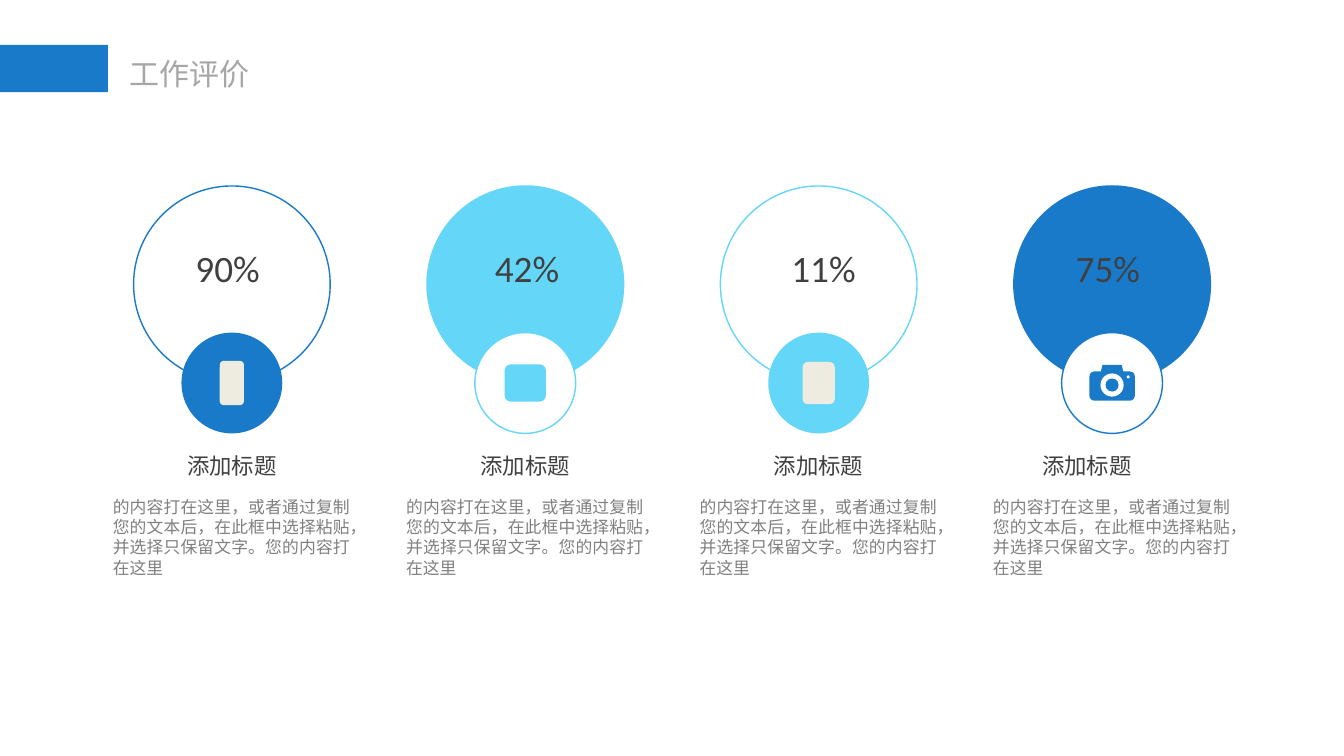
"""Builds the work review slide: four percentage circles with icons and captions."""
import pptx
import pptx.dml.color
import pptx.enum.shapes
import pptx.enum.text
import pptx.oxml
import pptx.oxml.ns
import pptx.util

RGBColor = pptx.dml.color.RGBColor
SHAPES = pptx.enum.shapes.MSO_SHAPE
ALIGN = pptx.enum.text.PP_ALIGN

BLUE = RGBColor(0x1A, 0x7A, 0xCA)
SKY = RGBColor(0x64, 0xD6, 0xF7)
WHITE = RGBColor(0xFF, 0xFF, 0xFF)
CREAM = RGBColor(0xEE, 0xEC, 0xE1)
DARK = RGBColor(0x40, 0x40, 0x40)
GREY = RGBColor(0x80, 0x80, 0x80)
PALE = RGBColor(0xA6, 0xA6, 0xA6)

LATIN, CHINESE = "Calibri", "Noto Sans CJK SC"
TITLE = "工作评价"
HEADING = "添加标题"
BODY = "的内容打在这里，或者通过复制您的文本后，在此框中选择粘贴，并选择只保留文字。您的内容打在这里"

COLUMNS = [
    {"percent": "90%", "shift": -0.03, "heading_shift": 0, "ring": (None, BLUE),
     "badge": (BLUE, None), "icon": (0.24, 0.44, CREAM)},
    {"percent": "42%", "shift": 0.03, "heading_shift": 0, "ring": (SKY, SKY),
     "badge": (WHITE, SKY), "icon": (0.41, 0.37, SKY)},
    {"percent": "11%", "shift": 0.06, "heading_shift": 0, "ring": (None, SKY),
     "badge": (SKY, None), "icon": (0.32, 0.42, CREAM)},
    {"percent": "75%", "shift": -0.03, "heading_shift": -0.25, "ring": (BLUE, BLUE),
     "badge": (WHITE, BLUE), "icon": None},
]
CAMERA = [
    (SHAPES.TRAPEZOID, 0, -0.14, 0.23, 0.08, BLUE),
    (SHAPES.ROUNDED_RECTANGLE, 0, 0.03, 0.45, 0.29, BLUE),
    (SHAPES.OVAL, 0, 0.02, 0.23, 0.23, WHITE),
    (SHAPES.OVAL, 0, 0.02, 0.13, 0.13, BLUE),
    (SHAPES.OVAL, 0.16, -0.06, 0.03, 0.03, WHITE),
]

WIDTH, HEIGHT = 13.33, 7.5
FIRST_CENTRE, PITCH = 2.3, 2.91
RING_SIZE, RING_MIDDLE = 1.95, 2.82
BADGE_SIZE, BADGE_MIDDLE = 1, 3.8

TITLE_STYLE = {"size": pptx.util.Pt(21.4), "name": CHINESE}
PERCENT_STYLE = {"size": pptx.util.Pt(26.6), "name": LATIN}
HEADING_STYLE = {"size": pptx.util.Pt(16), "name": CHINESE}
BODY_STYLE = {"size": pptx.util.Pt(12), "name": CHINESE}


def add_figure(page, kind, centre, middle, width, height, fill, line=None):
    place = (centre - width / 2, middle - height / 2, width, height)
    figure = page.shapes.add_shape(kind, *map(pptx.util.Inches, place))
    figure.shadow.inherit = False
    if fill is None:
        figure.fill.background()
    else:
        figure.fill.solid()
        figure.fill.fore_color.rgb = fill
    if line is None:
        figure.line.fill.background()
    else:
        figure.line.color.rgb = line
        figure.line.width = pptx.util.Pt(1)
    return figure


def add_text(page, text, place, style, colour, align=ALIGN.CENTER, wrap=False):
    box = page.shapes.add_textbox(*map(pptx.util.Inches, place))
    frame = box.text_frame
    frame.word_wrap = wrap
    frame.auto_size = pptx.enum.text.MSO_AUTO_SIZE.SHAPE_TO_FIT_TEXT
    para = frame.paragraphs[0]
    para.alignment = align
    span = para.add_run()
    span.text = text
    for name, value in style.items():
        setattr(span.font, name, value)
    span.font.color.rgb = colour
    east_asian = pptx.oxml.parse_xml(
        f'<a:ea {pptx.oxml.ns.nsdecls("a")} typeface="{style["name"]}"/>')
    span.font._element.append(east_asian)


def add_column(page, centre, column):
    add_figure(page, SHAPES.OVAL, centre, RING_MIDDLE, RING_SIZE, RING_SIZE, *column["ring"])
    add_figure(page, SHAPES.OVAL, centre, BADGE_MIDDLE, BADGE_SIZE, BADGE_SIZE, *column["badge"])
    if column["icon"]:
        width, height, colour = column["icon"]
        add_figure(page, SHAPES.ROUNDED_RECTANGLE, centre, BADGE_MIDDLE, width, height, colour)
    else:
        for kind, right, down, width, height, colour in CAMERA:
            add_figure(page, kind, centre + right, BADGE_MIDDLE + down, width, height, colour)
    add_text(page, column["percent"], (centre - 0.43 + column["shift"], 2.38, 0.85, 0.55),
             PERCENT_STYLE, DARK, ALIGN.LEFT)
    add_text(page, HEADING, (centre - 0.55 + column["heading_shift"], 4.44, 1.1, 0.37),
             HEADING_STYLE, DARK)
    add_text(page, BODY, (centre - 1.28, 4.88, 2.55, 0.91), BODY_STYLE, GREY,
             ALIGN.JUSTIFY, True)


def main():
    deck = pptx.Presentation()
    deck.slide_width = pptx.util.Inches(WIDTH)
    deck.slide_height = pptx.util.Inches(HEIGHT)
    page = deck.slides.add_slide(deck.slide_layouts[6])
    add_figure(page, SHAPES.RECTANGLE, 0.535, 0.68, 1.07, 0.47, BLUE)
    add_text(page, TITLE, (1.18, 0.5, 1.4, 0.46), TITLE_STYLE, PALE)
    for index, column in enumerate(COLUMNS):
        add_column(page, FIRST_CENTRE + index * PITCH, column)
    deck.save("out.pptx")


if __name__ == "__main__":
    main()
